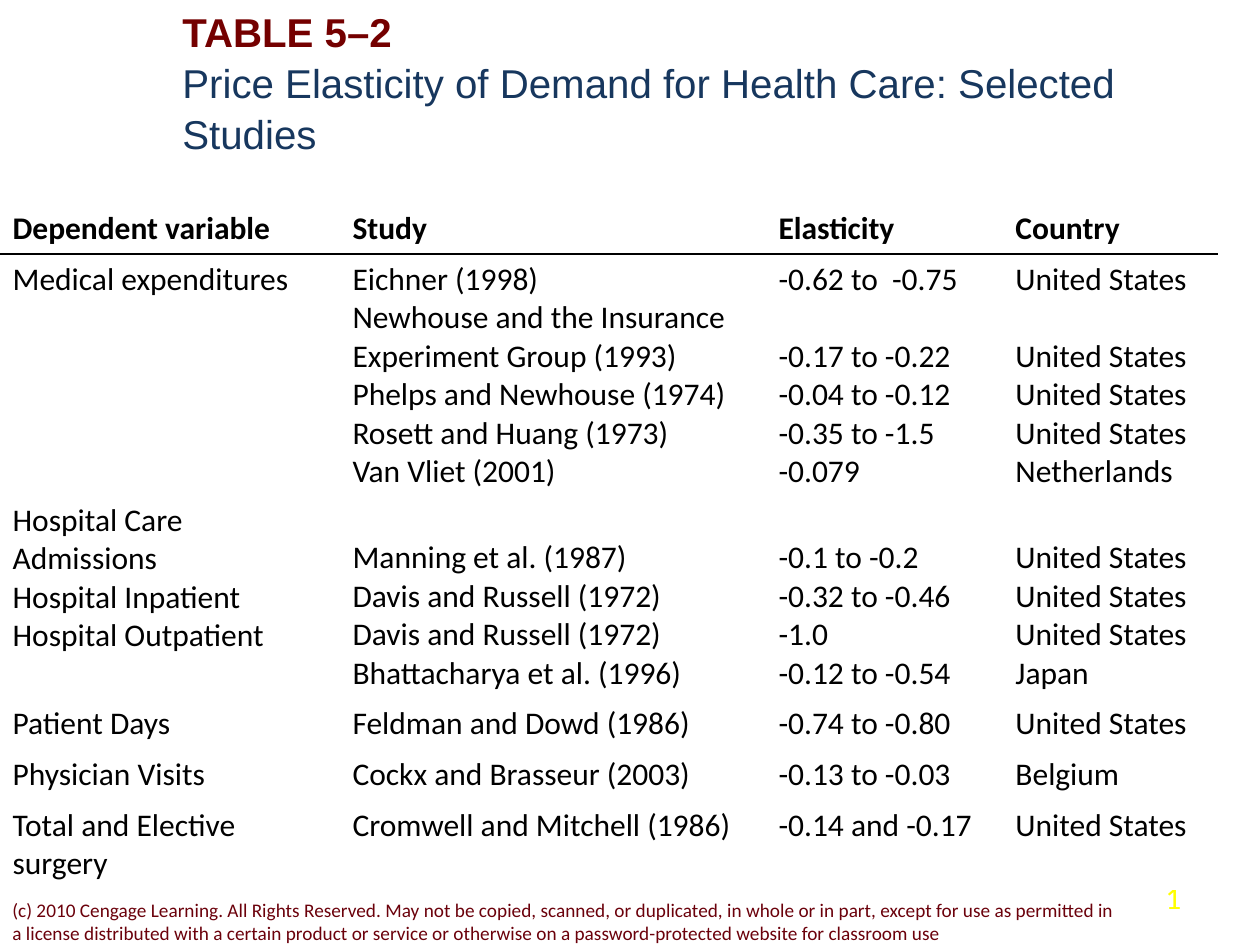
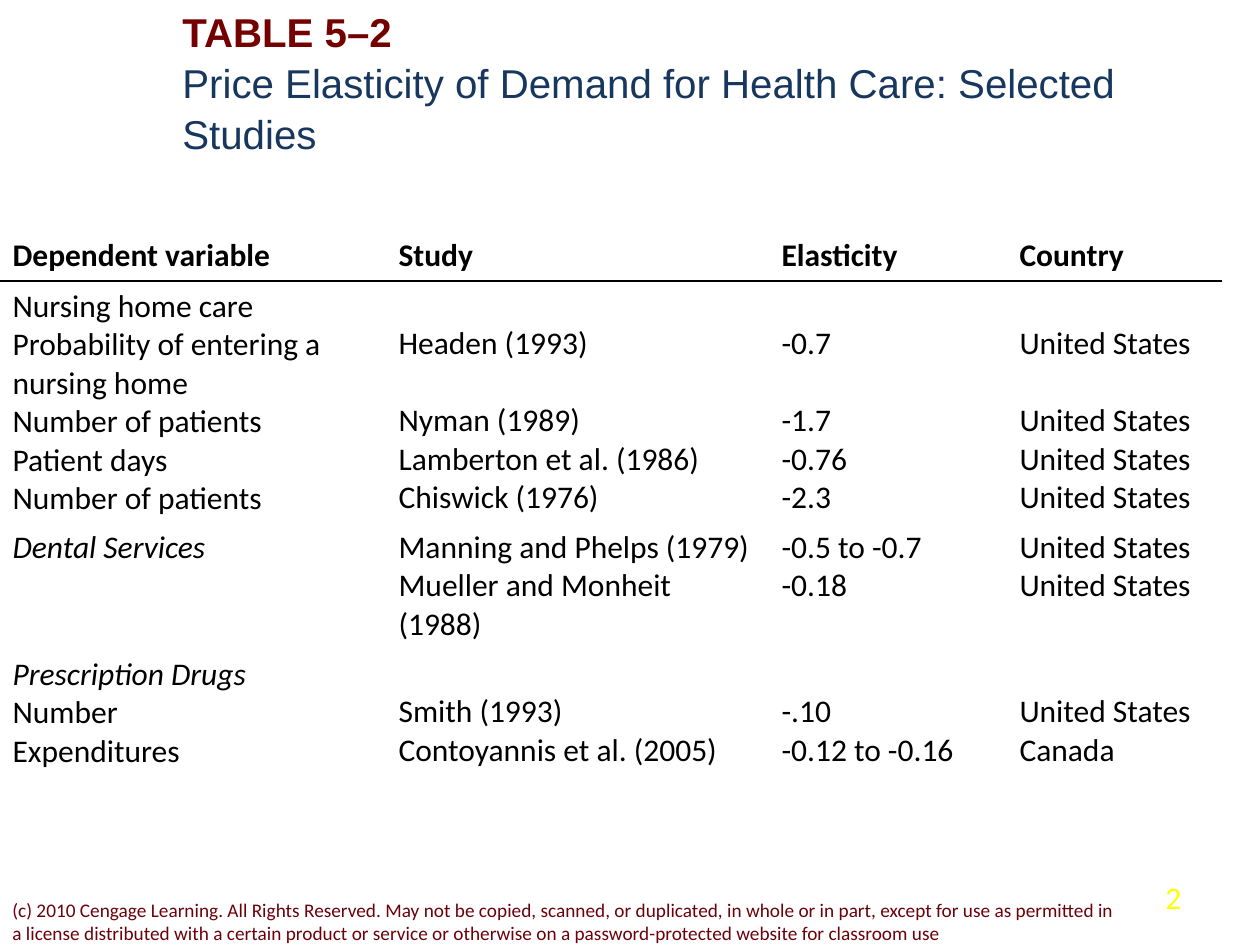
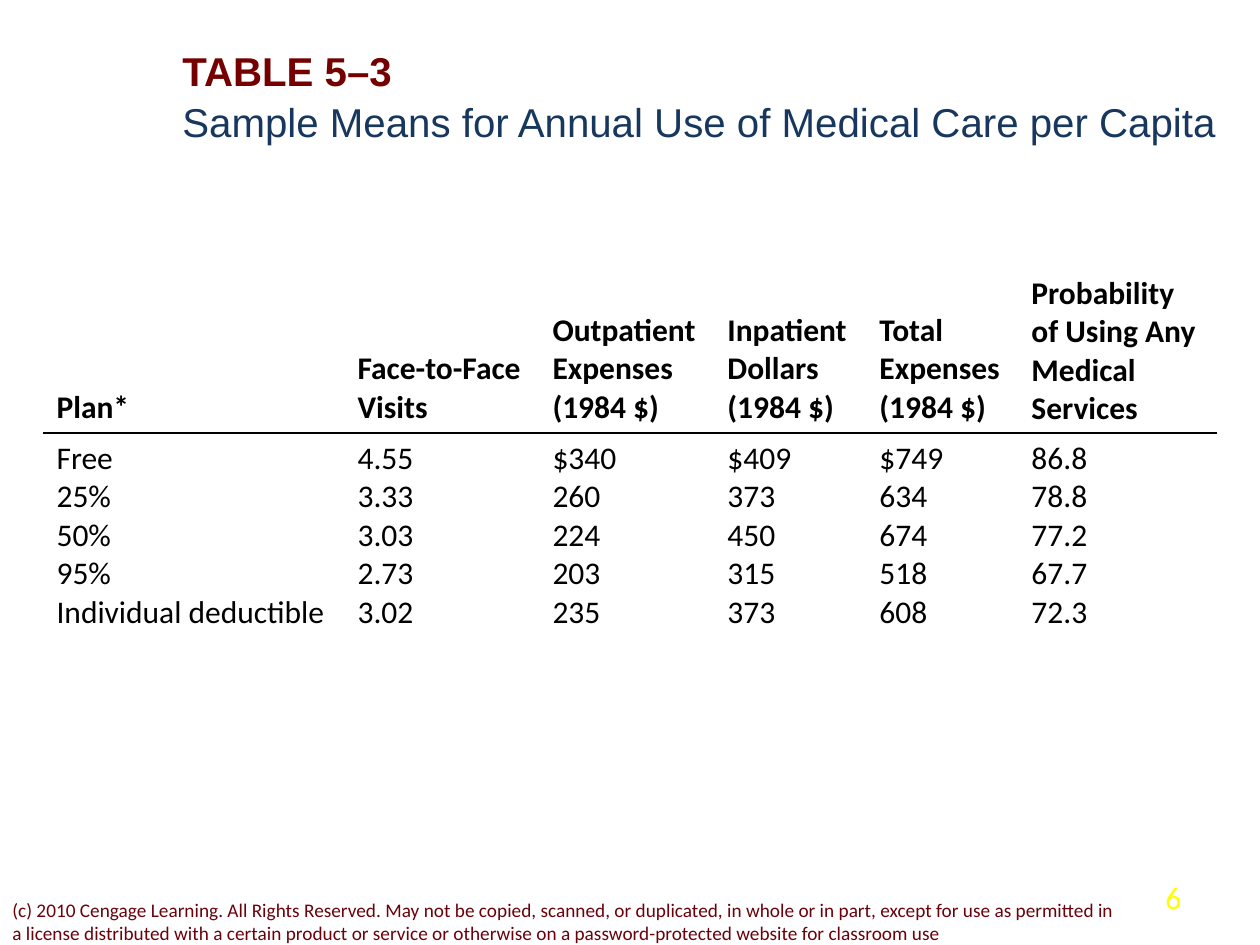
from pptx import Presentation
from pptx.dml.color import RGBColor
from pptx.enum.text import MSO_ANCHOR
from pptx.oxml import parse_xml
from pptx.oxml.ns import nsdecls
from pptx.util import Pt

TOP, BOTTOM = MSO_ANCHOR.TOP, MSO_ANCHOR.BOTTOM
MAROON = RGBColor(0x74, 0x00, 0x00)
NAVY = RGBColor(0x17, 0x37, 0x5E)
WINE = RGBColor(0x6B, 0x01, 0x0B)
YELLOW = RGBColor(0xFF, 0xFF, 0x00)
BLACK = RGBColor(0x00, 0x00, 0x00)

LABEL = dict(name="Arial", size=Pt(23), bold=True, color=MAROON)
TITLE = dict(LABEL, bold=False, color=NAVY)
NOTICE = dict(name="Calibri", size=Pt(11), color=WINE)
NUMBER = dict(name="Calibri", size=Pt(18), color=YELLOW)
BODY = dict(name="Calibri", size=Pt(18), bold=False, italic=False, color=BLACK)

SLIDE_W, SLIDE_H = 1260, 945
LINE_PX, PAD_PX = 38, 6
LINE_PT = Pt(22)
ITALICS = {"Dental Services", "Prescription Drugs"}
COPYRIGHT = (
    "(c) 2010 Cengage Learning. All Rights Reserved. May not be copied, scanned, "
    "or duplicated, in whole or in part, except for use as permitted in a license "
    "distributed with a certain product or service or otherwise on a "
    "password-protected website for classroom use"
)

STUDY_HEAD = (1, ["Dependent variable", "Study", "Elasticity", "Country"])
STUDY_TITLE = ("TABLE 5–2", "Price Elasticity of Demand for Health Care: Selected Studies")
US = "United States"

CARE_ROWS = [
    STUDY_HEAD,
    (6, [
        "Medical expenditures",
        "Eichner (1998)\nNewhouse and the Insurance\nExperiment Group (1993)\n"
        "Phelps and Newhouse (1974)\nRosett and Huang (1973)\nVan Vliet (2001)",
        "-0.62 to  -0.75\n\n-0.17 to -0.22\n-0.04 to -0.12\n-0.35 to -1.5\n-0.079",
        f"{US}\n\n{US}\n{US}\n{US}\nNetherlands",
    ]),
    (5, [
        "Hospital Care\nAdmissions\nHospital Inpatient\nHospital Outpatient",
        "\nManning et al. (1987)\nDavis and Russell (1972)\n"
        "Davis and Russell (1972)\nBhattacharya et al. (1996)",
        "\n-0.1 to -0.2\n-0.32 to -0.46\n-1.0\n-0.12 to -0.54",
        f"\n{US}\n{US}\n{US}\nJapan",
    ]),
    (1, ["Patient Days", "Feldman and Dowd (1986)", "-0.74 to -0.80", US]),
    (1, ["Physician Visits", "Cockx and Brasseur (2003)", "-0.13 to -0.03", "Belgium"]),
    (2, ["Total and Elective surgery", "Cromwell and Mitchell (1986)", "-0.14 and -0.17", US]),
]

SERVICE_ROWS = [
    STUDY_HEAD,
    (6, [
        "Nursing home care\nProbability of entering a nursing home\n"
        "Number of patients\nPatient days\nNumber of patients",
        "\nHeaden (1993)\n\nNyman (1989)\nLamberton et al. (1986)\nChiswick (1976)",
        "\n-0.7\n\n-1.7\n-0.76\n-2.3",
        f"\n{US}\n\n{US}\n{US}\n{US}",
    ]),
    (3, [
        "Dental Services",
        "Manning and Phelps (1979)\nMueller and Monheit (1988)",
        "-0.5 to -0.7\n-0.18",
        f"{US}\n{US}",
    ]),
    (3, [
        "Prescription Drugs\nNumber\nExpenditures",
        "\nSmith (1993)\nContoyannis et al. (2005)",
        "\n-.10\n-0.12 to -0.16",
        f"\n{US}\nCanada",
    ]),
]

PLAN_ROWS = [
    (4, [
        "Plan*",
        "Face-to-Face\nVisits",
        "Outpatient\nExpenses\n(1984 $)",
        "Inpatient\nDollars\n(1984 $)",
        "Total\nExpenses\n(1984 $)",
        "Probability\nof Using Any\nMedical\nServices",
    ]),
    (5, [
        "Free\n25%\n50%\n95%\nIndividual deductible",
        "4.55\n3.33\n3.03\n2.73\n3.02",
        "$340\n260\n224\n203\n235",
        "$409\n373\n450\n315\n373",
        "$749\n634\n674\n518\n608",
        "86.8\n78.8\n77.2\n67.7\n72.3",
    ]),
]


def px(n):
    return n * 914400 // 126


def add_run(p, text, fmt):
    r = p.add_run()
    r.text = text
    for key, value in fmt.items():
        if key == "color":
            r.font.color.rgb = value
        else:
            setattr(r.font, key, value)


def add_box(s, box):
    tf = s.shapes.add_textbox(*map(px, box)).text_frame
    tf.word_wrap = True
    tf.vertical_anchor = TOP
    return tf.paragraphs[0]


def add_title(s, top, label, title):
    p = add_box(s, (170, top, 1090, 157))
    p.line_spacing = 1.05
    add_run(p, label, LABEL)
    p.add_line_break()
    add_run(p, title, TITLE)


def add_footer(s, number):
    add_run(add_box(s, (0, 892, 1135, 50)), COPYRIGHT, NOTICE)
    add_run(add_box(s, (1153, 872, 68, 50)), number, NUMBER)


def add_border(cell, side):
    cell._tc.get_or_add_tcPr().insert(0, parse_xml(
        f'<a:{side} {nsdecls("a")} w="12700"><a:solidFill>'
        f'<a:srgbClr val="{BLACK}"/></a:solidFill></a:{side}>'))


def fill_cell(cell, text, fmt):
    tf = cell.text_frame
    blanks = 0
    first = True
    for line in text.split("\n"):
        if not line:
            blanks += 1
            continue
        p = tf.paragraphs[0] if first else tf.add_paragraph()
        if blanks and first:
            cell.margin_top = px(PAD_PX + blanks * LINE_PX)
        elif blanks:
            p.space_before = LINE_PT * blanks
        add_run(p, line, dict(fmt, italic=line in ITALICS))
        first, blanks = False, 0


def add_study_table(s, left, top, widths, rows):
    heights = [n * LINE_PX + 2 * PAD_PX + 1 for n, _ in rows]
    box = (left, top, sum(widths), sum(heights))
    table = s.shapes.add_table(len(rows), len(widths), *map(px, box)).table
    table.first_row = table.horz_banding = False
    for col, width in zip(table.columns, widths):
        col.width = px(width)
    for i, (_, texts) in enumerate(rows):
        table.rows[i].height = px(heights[i])
        for j, text in enumerate(texts):
            cell = table.cell(i, j)
            cell.fill.background()
            cell.vertical_anchor = TOP if i else BOTTOM
            fill_cell(cell, text, dict(BODY, bold=i == 0))
            if i < 2:
                add_border(cell, ("lnB", "lnT")[i])


def add_slide(prs, number, title_top, title, left, top, widths, rows):
    s = prs.slides.add_slide(prs.slide_layouts[6])
    add_title(s, title_top, *title)
    add_footer(s, number)
    add_study_table(s, left, top, widths, rows)


def main():
    prs = Presentation()
    prs.slide_width, prs.slide_height = px(SLIDE_W), px(SLIDE_H)
    add_slide(prs, "1", -1, STUDY_TITLE, 0, 203, (340, 426, 237, 214), CARE_ROWS)
    add_slide(prs, "2", -1, STUDY_TITLE, 0, 230, (386, 383, 238, 214), SERVICE_ROWS)
    add_slide(prs, "6", 38,
              ("TABLE 5–3", "Sample Means for Annual Use of Medical Care per Capita"),
              44, 268, (301, 195, 175, 152, 152, 197), PLAN_ROWS)
    prs.save("out.pptx")


if __name__ == "__main__":
    main()
